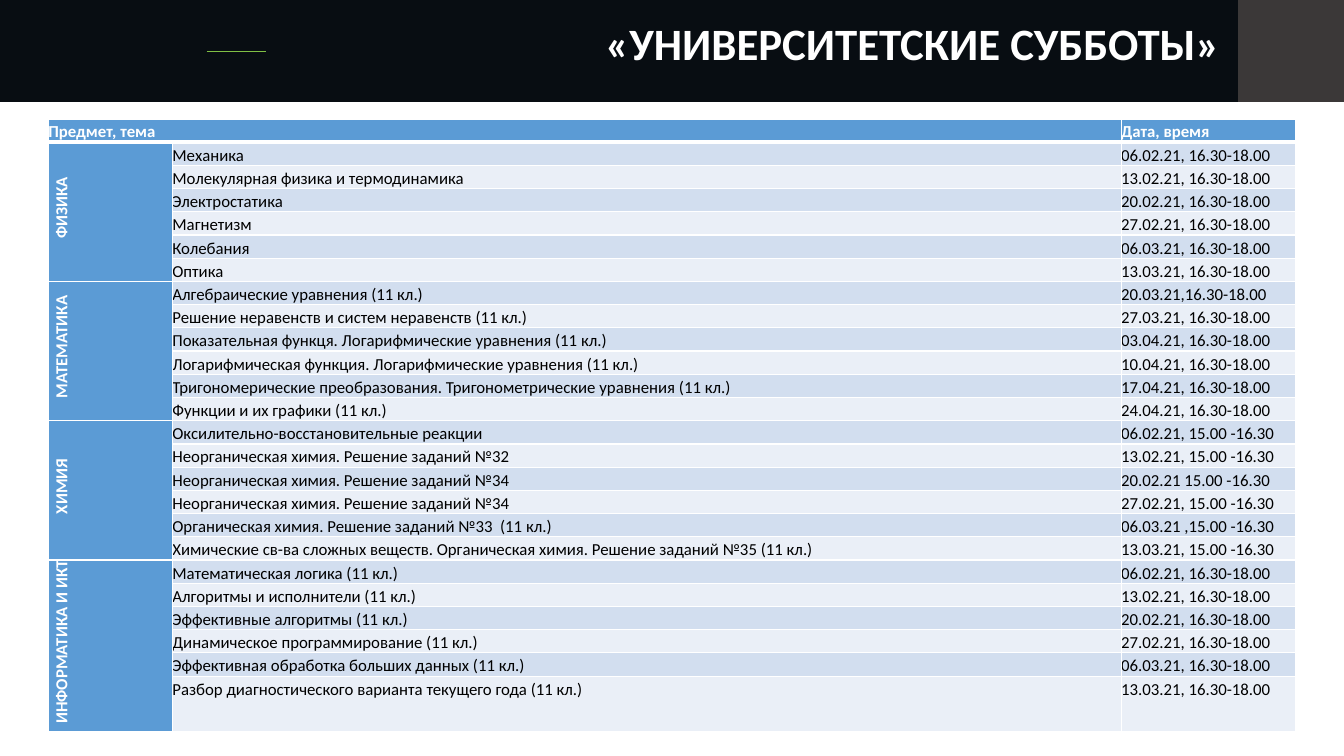
from dataclasses import dataclass

from lxml.etree import SubElement
from pptx import Presentation
from pptx.dml.color import RGBColor
from pptx.enum.shapes import MSO_CONNECTOR as Connector, MSO_SHAPE as Shape
from pptx.enum.text import MSO_ANCHOR as Anchor, MSO_AUTO_SIZE as AutoSize, PP_ALIGN as Align
from pptx.oxml.ns import qn
from pptx.util import Inches, Pt


@dataclass(frozen=True)
class Theme:
    font: str = "Calibri"
    title_size: int = 32
    body_size: int = 12
    banner: str = "080D12"
    corner: str = "3B3838"
    dash: str = "80BF44"
    heading: str = "5B9BD5"
    bands: tuple = ("D2DEEF", "EAEFF7")
    light: str = "FFFFFF"
    dark: str = "000000"


THEME = Theme()
SLIDE_WIDTH, SLIDE_HEIGHT = 13.33, 7.5
BANNER_BOX = (0, 0, SLIDE_WIDTH, 1.01)
TABLE_BOX = (0.48, 1.18, 12.37, 5.75)
COLUMNS = (1.23, 9.41, 1.73)
HEADER_ROW, TOPIC_ROW = 0.11, 0.21

SUBJECTS = {
    "ФИЗИКА": [
        ("Механика", "06.02.21, 16.30-18.00"),
        ("Молекулярная физика и термодинамика", "13.02.21, 16.30-18.00"),
        ("Электростатика", "20.02.21, 16.30-18.00"),
        ("Магнетизм", "27.02.21, 16.30-18.00"),
        ("Колебания", "06.03.21, 16.30-18.00"),
        ("Оптика", "13.03.21, 16.30-18.00"),
    ],
    "МАТЕМАТИКА": [
        ("Алгебраические уравнения (11 кл.)", "20.03.21,16.30-18.00"),
        ("Решение неравенств и систем неравенств (11 кл.)", "27.03.21, 16.30-18.00"),
        ("Показательная функця. Логарифмические уравнения (11 кл.)", "03.04.21, 16.30-18.00"),
        ("Логарифмическая функция. Логарифмические уравнения (11 кл.)", "10.04.21, 16.30-18.00"),
        ("Тригономерические преобразования. Тригонометрические уравнения (11 кл.)",
         "17.04.21, 16.30-18.00"),
        ("Функции и их графики (11 кл.)", "24.04.21, 16.30-18.00"),
    ],
    "ХИМИЯ": [
        ("Оксилительно-восстановительные реакции", "06.02.21, 15.00 -16.30"),
        ("Неорганическая химия. Решение заданий №32", "13.02.21, 15.00 -16.30"),
        ("Неорганическая химия. Решение заданий №34", "20.02.21 15.00 -16.30"),
        ("Неорганическая химия. Решение заданий №34", "27.02.21, 15.00 -16.30"),
        ("Органическая химия. Решение заданий №33  (11 кл.)", "06.03.21 ,15.00 -16.30"),
        ("Химические св-ва сложных веществ. Органическая химия. Решение заданий №35 (11 кл.)",
         "13.03.21, 15.00 -16.30"),
    ],
    "ИНФОРМАТИКА И ИКТ": [
        ("Математическая логика (11 кл.)", "06.02.21, 16.30-18.00"),
        ("Алгоритмы и исполнители (11 кл.)", "13.02.21, 16.30-18.00"),
        ("Эффективные алгоритмы (11 кл.)", "20.02.21, 16.30-18.00"),
        ("Динамическое программирование (11 кл.)", "27.02.21, 16.30-18.00"),
        ("Эффективная обработка больших данных (11 кл.)", "06.03.21, 16.30-18.00"),
        ("Разбор диагностического варианта текущего года (11 кл.)", "13.03.21, 16.30-18.00"),
    ],
}


def set_font(para, size, color, bold):
    para.font.name = THEME.font
    para.font.size = Pt(size)
    para.font.bold = bold
    para.font.color.rgb = RGBColor.from_string(color)


def add_block(page, left, top, width, height, color):
    block = page.shapes.add_shape(
        Shape.RECTANGLE, Inches(left), Inches(top), Inches(width), Inches(height))
    block.shadow.inherit = False
    block.fill.solid()
    block.fill.fore_color.rgb = RGBColor.from_string(color)
    block.line.fill.background()


def add_banner(page, box, title):
    left, top, width, height = box
    corner_width = 1.05
    add_block(page, left, top, width, height, THEME.banner)
    add_block(page, left + width - corner_width, top, corner_width, height, THEME.corner)

    middle = Inches(top + height / 2)
    dash = page.shapes.add_connector(
        Connector.STRAIGHT, Inches(left + 2.05), middle, Inches(left + 2.64), middle)
    dash.line.color.rgb = RGBColor.from_string(THEME.dash)
    dash.line.width = Pt(0.5)
    SubElement(dash._element.spPr, qn("a:effectLst"))

    title_box = page.shapes.add_textbox(
        Inches(left + 5.77), Inches(top + 0.11), Inches(6.67), Inches(0.64))
    frame = title_box.text_frame
    frame.word_wrap = True
    frame.auto_size = AutoSize.SHAPE_TO_FIT_TEXT
    para = frame.paragraphs[0]
    para.text = title
    para.alignment = Align.CENTER
    set_font(para, THEME.title_size, THEME.light, True)


def set_borders(cell, top, bottom):
    properties = cell._tc.get_or_add_tcPr()
    for side, width in (("L", 1), ("R", 1), ("T", top), ("B", bottom)):
        line = SubElement(properties, qn(f"a:ln{side}"), w=str(Pt(width)))
        fill = SubElement(line, qn("a:solidFill"))
        SubElement(fill, qn("a:srgbClr"), val=THEME.light)


def fill_cell(cell, text, color, is_heading, top=1, bottom=1):
    set_borders(cell, top, bottom)
    cell.fill.solid()
    cell.fill.fore_color.rgb = RGBColor.from_string(color)
    cell.margin_left = cell.margin_right = cell.margin_top = cell.margin_bottom = 0
    para = cell.text_frame.paragraphs[0]
    para.text = text
    para.line_spacing = 1.15
    para.space_after = Pt(10)
    set_font(para, THEME.body_size, THEME.light if is_heading else THEME.dark, is_heading)


def turn_subject(cell):
    cell.vertical_anchor = Anchor.MIDDLE
    cell._tc.get_or_add_tcPr().set("vert", "vert270")
    para = cell.text_frame.paragraphs[0]
    para.alignment = Align.CENTER
    para._p.get_or_add_pPr().set("marL", str(Inches(0.08)))


def add_schedule(page, box, subjects):
    rows = [("Предмет, тема", "", "Дата, время")]
    starts = {}
    for subject, topics in subjects.items():
        starts[len(rows)] = len(topics)
        for index, (topic, date) in enumerate(topics):
            rows.append((subject if index == 0 else "", topic, date))

    frame = page.shapes.add_table(len(rows), len(COLUMNS), *map(Inches, box))
    table = frame.table
    for column, width in zip(table.columns, COLUMNS):
        column.width = Inches(width)
    for index, values in enumerate(rows):
        table.rows[index].height = Inches(TOPIC_ROW if index else HEADER_ROW)
        for column, text in enumerate(values):
            is_heading = index == 0 or column == 0
            color = THEME.heading if is_heading else THEME.bands[(index - 1) % 2]
            fill_cell(table.cell(index, column), text, color, is_heading,
                      top=3 if index == 1 else 1, bottom=3 if index == 0 else 1)
    table.cell(0, 0).merge(table.cell(0, 1))
    for start, count in starts.items():
        turn_subject(table.cell(start, 0))
        table.cell(start, 0).merge(table.cell(start + count - 1, 0))
    frame.height = Inches(box[3])


def main():
    deck = Presentation()
    deck.slide_width, deck.slide_height = Inches(SLIDE_WIDTH), Inches(SLIDE_HEIGHT)
    page = deck.slides.add_slide(deck.slide_layouts[6])
    add_banner(page, BANNER_BOX, "«УНИВЕРСИТЕТСКИЕ СУББОТЫ» ")
    add_schedule(page, TABLE_BOX, SUBJECTS)
    deck.save("out.pptx")


if __name__ == "__main__":
    main()
